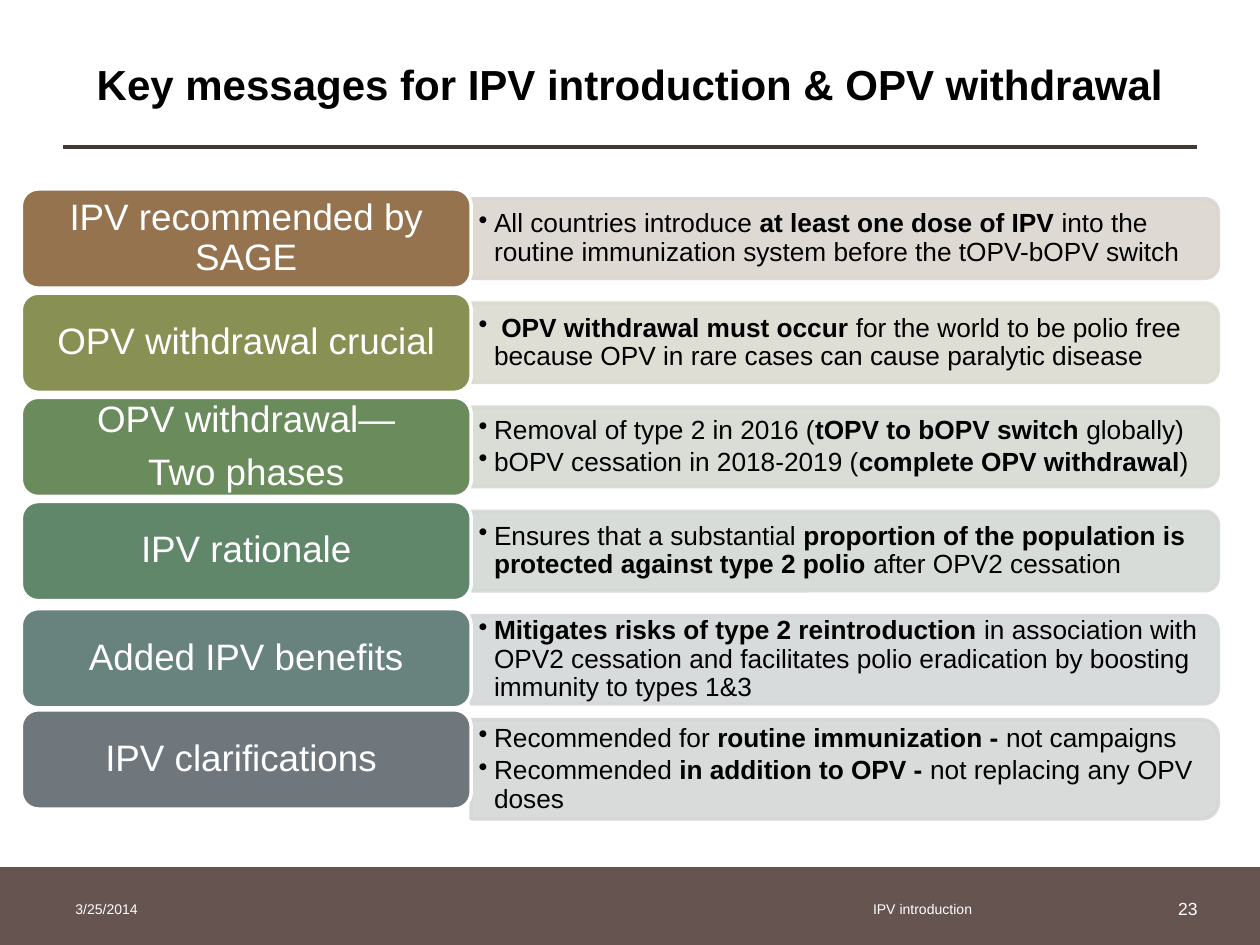
from math import cos, pi, sin

from lxml import etree
from pptx import Presentation
from pptx.dml.color import RGBColor
from pptx.enum.shapes import MSO_CONNECTOR, MSO_SHAPE
from pptx.enum.text import MSO_ANCHOR, PP_ALIGN
from pptx.oxml.ns import qn
from pptx.util import Cm, Pt

STRAIGHT = MSO_CONNECTOR.STRAIGHT
RECTANGLE, ROUNDED = MSO_SHAPE.RECTANGLE, MSO_SHAPE.ROUNDED_RECTANGLE
MIDDLE = MSO_ANCHOR.MIDDLE
LEFT, CENTER, RIGHT = PP_ALIGN.LEFT, PP_ALIGN.CENTER, PP_ALIGN.RIGHT

BLACK = RGBColor(0x00, 0x00, 0x00)
WHITE = RGBColor(0xFF, 0xFF, 0xFF)
RULE_BROWN = RGBColor(0x44, 0x38, 0x35)
FOOTER_BROWN = RGBColor(0x65, 0x54, 0x50)
BROWN, PALE_BROWN = RGBColor(0x94, 0x73, 0x4E), RGBColor(0xDC, 0xD5, 0xD0)
OLIVE, PALE_OLIVE = RGBColor(0x89, 0x90, 0x54), RGBColor(0xDB, 0xDB, 0xD1)
GREEN, PALE_GREEN = RGBColor(0x6A, 0x8B, 0x5B), RGBColor(0xD5, 0xDA, 0xD2)
JADE, PALE_JADE = RGBColor(0x61, 0x87, 0x6B), RGBColor(0xD3, 0xD9, 0xD4)
TEAL, PALE_TEAL = RGBColor(0x68, 0x82, 0x7E), RGBColor(0xD4, 0xD8, 0xD8)
SLATE, PALE_SLATE = RGBColor(0x6F, 0x77, 0x7D), RGBColor(0xD5, 0xD6, 0xD7)

FONT = "Arial"
TITLE = {"size": Pt(24), "color": BLACK, "bold": True, "align": CENTER, "line_spacing": 0.9}
LABEL = {"size": Pt(21), "color": WHITE, "align": CENTER, "line_spacing": 0.9,
         "space_after": Pt(7.35)}
DETAIL = {"size": Pt(15), "color": BLACK, "line_spacing": 0.9, "space_after": Pt(2.3)}
FOOTER = {"size": Pt(8), "color": WHITE}
PAGE_NUMBER = {"size": Pt(10), "color": WHITE, "align": RIGHT}

LABEL_INSETS = (0.33, 0.2, 0.33, 0.2)
DETAIL_INSETS = (0.15, 0.15, 0.23, 0.15)
FOOTER_INSETS = (0.25, 0.13, 0.25, 0.13)
LABEL_LEFT, LABEL_WIDTH, LABEL_HEIGHT = 0.43, 9.07, 2
PANEL_LEFT, PANEL_WIDTH = 9.5, 15.06
FIRST_LABEL, FIRST_PANEL, ROW_PITCH = 3.81, 4.01, 2.1

MESSAGES = [
    (["IPV recommended by SAGE"], BROWN, PALE_BROWN, 0, 1.6,
     ["All countries introduce **at least one dose of IPV **into the routine "
      "immunization system before the tOPV-bOPV switch"]),
    (["OPV withdrawal crucial"], OLIVE, PALE_OLIVE, 0, 1.6,
     [" **OPV withdrawal must occur **for the world to be polio free because "
      "OPV in rare cases can cause paralytic disease"]),
    (["OPV withdrawal—", "Two phases"], GREEN, PALE_GREEN, 0, 1.6,
     ["Removal of type 2 in 2016 (**tOPV to bOPV switch **globally)",
      "bOPV cessation in 2018-2019 (**complete OPV withdrawal**)"]),
    (["IPV rationale"], JADE, PALE_JADE, 0, 1.6,
     ["Ensures that a substantial **proportion of the population is protected "
      "against type 2 polio **after OPV2 cessation"]),
    (["Added IPV benefits"], TEAL, PALE_TEAL, 0.06, 1.78,
     ["**Mitigates risks of type 2 reintroduction **in association with OPV2 cessation "
      "and facilitates polio eradication by boosting immunity to types 1&3"]),
    (["IPV clarifications "], SLATE, PALE_SLATE, 0, 2,
     ["Recommended for **routine immunization - **not campaigns",
      "Recommended **in addition to OPV - **not replacing any OPV doses"]),
]


class SlideBuilder:
    def __init__(self, page, font):
        self.page = page
        self.font = font

    def paint(self, shape, fill, line=None, opacity=None):
        shape.shadow.inherit = False
        shape.fill.solid()
        shape.fill.fore_color.rgb = fill
        if line is None:
            shape.line.fill.background()
        else:
            shape.line.color.rgb = line
            shape.line.width = Pt(2)
        if opacity:
            for color in shape._element.spPr.iter(qn("a:srgbClr")):
                etree.SubElement(color, qn("a:alpha"), val=str(opacity * 1000))

    def fill_text(self, shape, paragraphs, style, insets, bulleted=False):
        frame = shape.text_frame
        margins = zip(("left", "top", "right", "bottom"), insets)
        layout = {f"margin_{side}": Cm(inset) for side, inset in margins}
        layout.update(word_wrap=True, vertical_anchor=MIDDLE)
        for name, value in layout.items():
            setattr(frame, name, value)
        for index, text in enumerate(paragraphs):
            para = frame.add_paragraph() if index else frame.paragraphs[0]
            para.alignment = style.get("align", LEFT)
            for name in ("line_spacing", "space_after"):
                setattr(para, name, style.get(name))
            if bulleted:
                self.add_bullet(para)
            for position, part in enumerate(text.split("**")):
                if part:
                    span = para.add_run()
                    span.text = part
                    bold = style.get("bold", position % 2 == 1)
                    values = {"name": self.font, "size": style["size"], "bold": bold}
                    for name, value in values.items():
                        setattr(span.font, name, value)
                    span.font.color.rgb = style["color"]

    def add_bullet(self, para):
        properties = para._p.get_or_add_pPr()
        properties.set("marL", str(Cm(0.31)))
        properties.set("indent", str(-Cm(0.31)))
        etree.SubElement(properties, qn("a:buChar"), char="•")

    def add_text(self, left, top, width, height, text, style, insets):
        box = self.page.shapes.add_textbox(Cm(left), Cm(top), Cm(width), Cm(height))
        self.fill_text(box, [text], style, insets)

    def add_rule(self, left, top, right):
        rule = self.page.shapes.add_connector(STRAIGHT, Cm(left), Cm(top), Cm(right), Cm(top))
        rule.line.color.rgb = RULE_BROWN
        rule.line.width = Pt(2.25)
        etree.SubElement(rule._element.spPr, qn("a:effectLst"))

    def add_band(self, left, top, width, height, fill):
        band = self.page.shapes.add_shape(RECTANGLE, Cm(left), Cm(top), Cm(width), Cm(height))
        self.paint(band, fill)

    def add_label(self, top, lines, fill):
        label = self.page.shapes.add_shape(
            ROUNDED, Cm(LABEL_LEFT), Cm(top), Cm(LABEL_WIDTH), Cm(LABEL_HEIGHT))
        label.adjustments[0] = 0.17
        self.paint(label, fill, WHITE)
        self.fill_text(label, lines, LABEL, LABEL_INSETS)

    def add_panel(self, top, height, paragraphs, fill):
        right, bottom, radius = PANEL_LEFT + PANEL_WIDTH, top + height, height / 6
        steps = [step * pi / 16 for step in range(9)]
        upper = [(right - radius + radius * sin(angle), top + radius - radius * cos(angle))
                 for angle in steps]
        lower = [(x, top + bottom - y) for x, y in reversed(upper)]
        corners = upper + lower + [(PANEL_LEFT, bottom)]
        builder = self.page.shapes.build_freeform(Cm(PANEL_LEFT), Cm(top))
        builder.add_line_segments([(Cm(x), Cm(y)) for x, y in corners], close=True)
        panel = builder.convert_to_shape()
        self.paint(panel, fill, fill, opacity=90)
        self.fill_text(panel, paragraphs, DETAIL, DETAIL_INSETS, bulleted=True)


def main():
    deck = Presentation()
    deck.slide_width, deck.slide_height = Cm(25.4), Cm(19.05)
    page = deck.slides.add_slide(deck.slide_layouts[6])
    builder = SlideBuilder(page, FONT)

    builder.add_rule(1.27, 2.97, 24.13)
    builder.add_band(0, 17.48, 25.4, 1.57, FOOTER_BROWN)
    builder.add_text(1.27, 17.81, 5.92, 1.02, "3/25/2014", FOOTER, FOOTER_INSETS)
    builder.add_text(17.35, 17.81, 6.4, 1.02, "IPV introduction", FOOTER, FOOTER_INSETS)
    builder.add_text(23.32, 17.81, 1.07, 1.02, "23", PAGE_NUMBER, FOOTER_INSETS)
    builder.add_text(1.27, 1.3, 22.86, 0.91, "Key messages for IPV introduction & OPV withdrawal",
                     TITLE, (0, 0, 0, 0))

    for row, (lines, fill, pale, shift, height, details) in enumerate(MESSAGES):
        offset = row * ROW_PITCH
        builder.add_panel(FIRST_PANEL + offset, height, details, pale)
        builder.add_label(FIRST_LABEL + offset + shift, lines, fill)

    deck.save("out.pptx")


if __name__ == "__main__":
    main()
